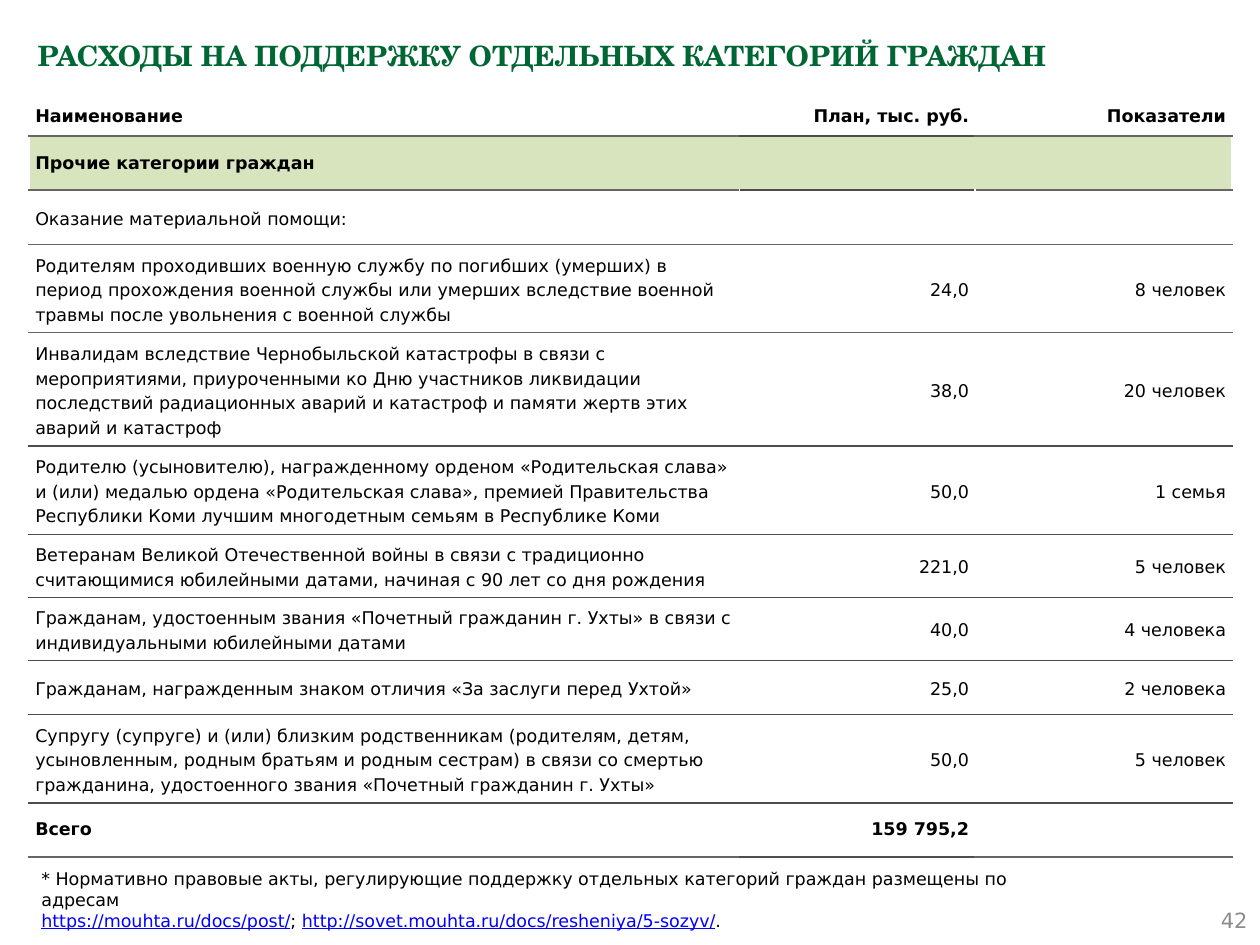
from lxml import etree
from pptx import Presentation
from pptx.dml.color import RGBColor
from pptx.enum.text import MSO_ANCHOR, MSO_AUTO_SIZE, PP_ALIGN
from pptx.oxml.ns import qn
from pptx.util import Inches, Pt

LEFT, RIGHT = PP_ALIGN.LEFT, PP_ALIGN.RIGHT
TOP, MIDDLE = MSO_ANCHOR.TOP, MSO_ANCHOR.MIDDLE
GROW = MSO_AUTO_SIZE.SHAPE_TO_FIT_TEXT

GREEN = RGBColor(0x00, 0x66, 0x33)
PALE_GREEN = RGBColor(0xD7, 0xE4, 0xBD)
BLACK = RGBColor(0x00, 0x00, 0x00)
WHITE = RGBColor(0xFF, 0xFF, 0xFF)
GRAY = RGBColor(0x8C, 0x8C, 0x8C)
RULE = RGBColor(0x4D, 0x4D, 0x4D)
SOFT_RULE = RGBColor(0x66, 0x66, 0x66)
LINK = RGBColor(0x00, 0x00, 0xFF)

SANS = "DejaVu Sans"
SERIF = "TeX Gyre Schola"

TITLE = "РАСХОДЫ НА ПОДДЕРЖКУ ОТДЕЛЬНЫХ КАТЕГОРИЙ ГРАЖДАН"
COL_WIDTHS = (5.64, 1.87, 2.04)
HEADER_HEIGHT, ROW_HEIGHT = 0.29, 0.43
ROWS = [
    ("Наименование", "План, тыс. руб.", "Показатели"),
    ("Прочие категории граждан", "", ""),
    ("Оказание материальной помощи:", "", ""),
    ("Родителям проходивших военную службу по погибших (умерших) в период "
     "прохождения военной службы или умерших вследствие военной травмы после "
     "увольнения с военной службы", "24,0", "8 человек"),
    ("Инвалидам вследствие Чернобыльской катастрофы в связи с мероприятиями, "
     "приуроченными ко Дню участников ликвидации последствий радиационных аварий "
     "и катастроф и памяти жертв этих аварий и катастроф", "38,0", "20 человек"),
    ("Родителю (усыновителю), награжденному орденом «Родительская слава» и (или) "
     "медалью ордена «Родительская слава», премией Правительства Республики Коми "
     "лучшим многодетным семьям в Республике Коми", "50,0", "1 семья"),
    ("Ветеранам Великой Отечественной войны в связи с традиционно считающимися "
     "юбилейными датами, начиная с 90 лет со дня рождения", "221,0", "5 человек"),
    ("Гражданам, удостоенным звания «Почетный гражданин г. Ухты» в связи с "
     "индивидуальными юбилейными датами", "40,0", "4 человека"),
    ("Гражданам, награжденным знаком отличия «За заслуги перед Ухтой»",
     "25,0", "2 человека"),
    ("Супругу (супруге) и (или) близким родственникам (родителям, детям, "
     "усыновленным, родным братьям и родным сестрам) в связи со смертью "
     "гражданина, удостоенного звания «Почетный гражданин г. Ухты»",
     "50,0", "5 человек"),
    ("Всего", "159 795,2", ""),
]
HEADER, SECTION, TOTAL = 0, 1, len(ROWS) - 1
BOLD_ROWS = (HEADER, SECTION, TOTAL)
SOFT_ROWS = (0, 1, 2, 3, TOTAL)

NOTE = [
    [("* Нормативно правовые акты, регулирующие поддержку отдельных категорий "
      "граждан размещены по адресам", BLACK)],
    [("https://mouhta.ru/docs/post/", LINK), ("; ", BLACK),
     ("http://sovet.mouhta.ru/docs/resheniya/5-sozyv/", LINK), (".", BLACK)],
]


def add_run(p, text, size, color, font=SANS, bold=False, underline=False):
    r = p.add_run()
    r.text = text
    r.font.size = Pt(size)
    r.font.name = font
    r.font.bold = bold
    r.font.underline = underline
    r.font.color.rgb = color


def add_text_frame(s, box, anchor=TOP):
    tf = s.shapes.add_textbox(*map(Inches, box)).text_frame
    tf.word_wrap = True
    tf.vertical_anchor = anchor
    return tf


def add_title(s, box):
    p = add_text_frame(s, box).paragraphs[0]
    p.line_spacing = 1.2
    add_run(p, TITLE, 16, GREEN, font=SERIF, bold=True)


def add_page_number(s, box):
    p = add_text_frame(s, box, MIDDLE).paragraphs[0]
    p.alignment = RIGHT
    add_run(p, "42", 12, GRAY)


def add_note(s, box):
    tf = add_text_frame(s, box)
    tf.auto_size = GROW
    for i, runs in enumerate(NOTE):
        p = tf.paragraphs[0] if i == 0 else tf.add_paragraph()
        for text, color in runs:
            add_run(p, text, 10, color, underline=color == LINK)


def set_borders(cell, colors):
    tcPr = cell._tc.get_or_add_tcPr()
    for side, color in zip("LRTB", colors):
        ln = etree.SubElement(tcPr, qn(f"a:ln{side}"), w=str(Pt(1)))
        if color is None:
            etree.SubElement(ln, qn("a:noFill"))
        else:
            fill = etree.SubElement(ln, qn("a:solidFill"))
            etree.SubElement(fill, qn("a:srgbClr"), val=str(color))


def rule_below(row, col):
    if row < 0:
        return WHITE
    if row not in SOFT_ROWS or (col == 1 and row in BOLD_ROWS):
        return RULE
    return SOFT_RULE


def fill_cell(cell, row, col, text):
    cell.margin_left = cell.margin_right = Inches(0.05)
    cell.margin_top = cell.margin_bottom = Inches(0.05)
    cell.vertical_anchor = TOP if row == HEADER else MIDDLE
    section = row == SECTION
    left = None if section and col > 0 else WHITE
    right = None if section and col < 2 else WHITE
    set_borders(cell, (left, right, rule_below(row - 1, col), rule_below(row, col)))
    if section:
        cell.fill.solid()
        cell.fill.fore_color.rgb = PALE_GREEN
    else:
        cell.fill.background()
    if text:
        bold = row in BOLD_ROWS
        p = cell.text_frame.paragraphs[0]
        p.alignment = LEFT if col == 0 else RIGHT
        p.line_spacing = 1.0 if bold else 1.2
        add_run(p, text, 10, BLACK, bold=bold)


def add_expense_table(s, box):
    frame = s.shapes.add_table(len(ROWS), len(COL_WIDTHS), *map(Inches, box))
    table = frame.table
    table.first_row = False
    table.horz_banding = False
    for column, width in zip(table.columns, COL_WIDTHS):
        column.width = Inches(width)
    for i, values in enumerate(ROWS):
        table.rows[i].height = Inches(HEADER_HEIGHT if i == HEADER else ROW_HEIGHT)
        for j, text in enumerate(values):
            fill_cell(table.cell(i, j), i, j, text)


def main():
    prs = Presentation()
    prs.slide_width = Inches(10)
    prs.slide_height = Inches(7.5)
    s = prs.slides.add_slide(prs.slide_layouts[6])
    add_title(s, (0.2, 0.2, 9.61, 0.79))
    add_page_number(s, (7.67, 7.1, 2.33, 0.4))
    add_expense_table(s, (0.23, 0.79, 9.55, 5.87))
    add_note(s, (0.23, 6.84, 8.45, 0.44))
    prs.save("out.pptx")


if __name__ == "__main__":
    main()
